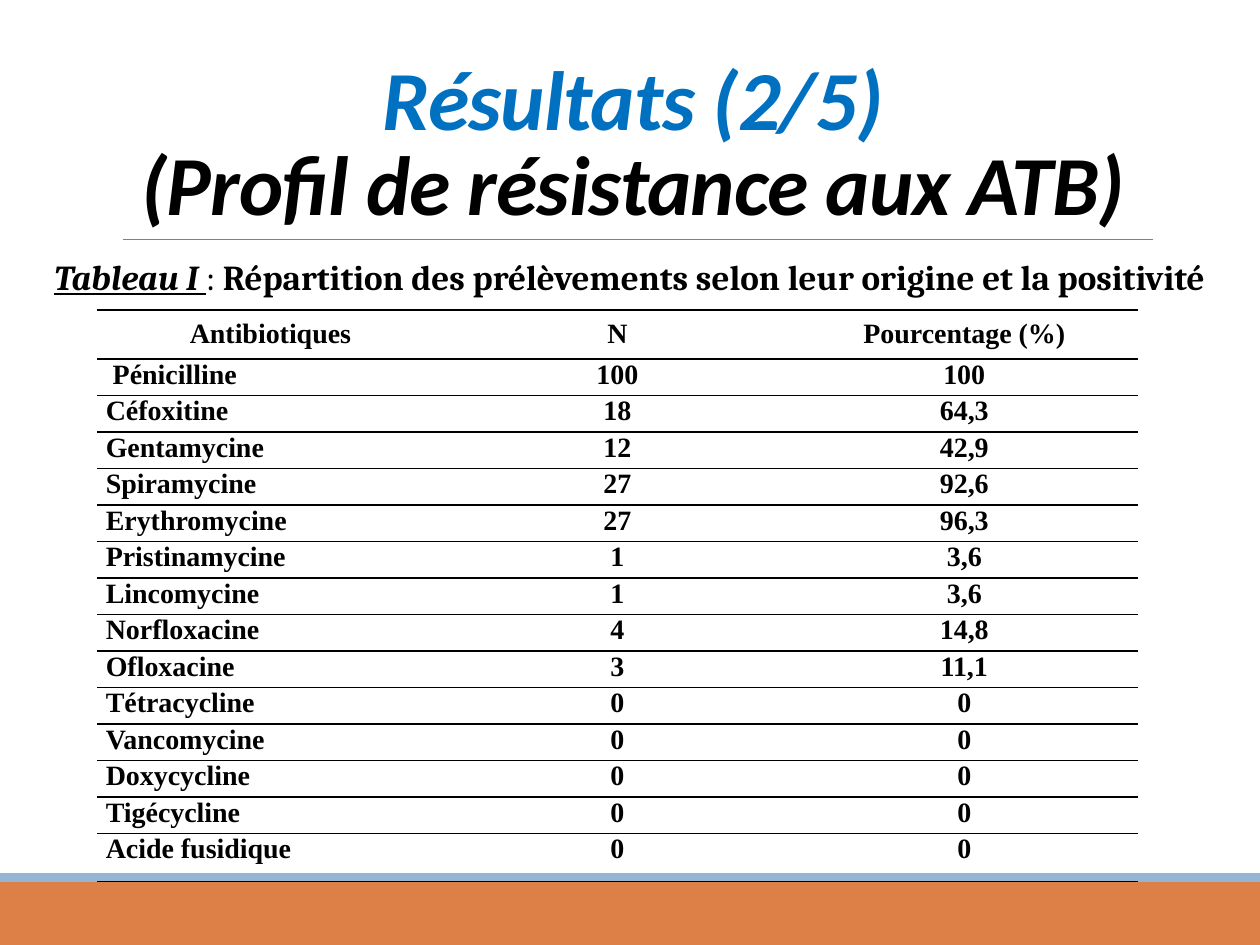
from typing import NamedTuple

from lxml import etree
from pptx import Presentation, util as u
from pptx.dml.color import RGBColor
from pptx.enum import shapes, text
from pptx.oxml import ns

BLACK = "000000"
CENTER = text.PP_ALIGN.CENTER


class Band(NamedTuple):
    top: float
    height: float
    color: str


class Resistance(NamedTuple):
    antibiotic: str
    count: str
    percentage: str


BANDS = [Band(7, 0.5, "DD8047"), Band(6.93, 0.07, "94B6D2")]
HEADER = Resistance("Antibiotiques", "N", "Pourcentage (%)")
RESULTS = [
    Resistance(" Pénicilline", "100", "100"),
    Resistance("Céfoxitine", "18", "64,3"),
    Resistance("Gentamycine", "12", "42,9"),
    Resistance("Spiramycine", "27", "92,6"),
    Resistance("Erythromycine", "27", "96,3"),
    Resistance("Pristinamycine", "1", "3,6"),
    Resistance("Lincomycine", "1", "3,6"),
    Resistance("Norfloxacine", "4", "14,8"),
    Resistance("Ofloxacine", "3", "11,1"),
    Resistance("Tétracycline", "0", "0"),
    Resistance("Vancomycine", "0", "0"),
    Resistance("Doxycycline", "0", "0"),
    Resistance("Tigécycline", "0", "0"),
    Resistance("Acide fusidique", "0", "0"),
]


def rgb(color: str) -> RGBColor:
    return RGBColor.from_string(color)


def add_run(paragraph, content: str, *, font: str, size: float, color: str = BLACK,
            bold: bool = True, italic: bool = False, underline: bool = False,
            spacing: float = 0) -> None:
    run = paragraph.add_run()
    run.text = content
    run.font.name = font
    run.font.size = u.Pt(size)
    run.font.bold = bold
    run.font.italic = italic
    run.font.underline = underline
    run.font.color.rgb = rgb(color)
    if spacing:
        run.font._element.set("spc", str(round(spacing * 100)))


def add_band(slide, band: Band) -> None:
    shape = slide.shapes.add_shape(shapes.MSO_SHAPE.RECTANGLE, 0, u.Inches(band.top),
                                   u.Inches(10), u.Inches(band.height))
    shape.shadow.inherit = False
    shape.fill.solid()
    shape.fill.fore_color.rgb = rgb(band.color)
    shape.line.fill.background()


def add_rule(slide) -> None:
    rule = slide.shapes.add_connector(shapes.MSO_CONNECTOR.STRAIGHT, u.Inches(0.98),
                                      u.Inches(1.9), u.Inches(9.15), u.Inches(1.9))
    rule.line.color.rgb = rgb("808080")
    rule.line.width = u.Pt(0.5)
    etree.SubElement(rule._element.spPr, ns.qn("a:effectLst"))


def fill_title(title) -> None:
    title.left, title.top = u.Inches(0.9), u.Inches(0.31)
    title.width, title.height = u.Inches(8.25), u.Inches(1.59)
    frame = title.text_frame
    frame.auto_size = text.MSO_AUTO_SIZE.NONE
    frame.vertical_anchor = text.MSO_ANCHOR.BOTTOM
    paragraph = frame.paragraphs[0]
    paragraph.alignment = CENTER
    paragraph.line_spacing = 0.85
    style = dict(font="Calibri", size=48, italic=True, spacing=-0.5)
    add_run(paragraph, "Résultats (2/5)", color="0070C0", **style)
    paragraph.add_line_break()
    add_run(paragraph, "(Profil de résistance aux ATB)", **style)


def add_caption(slide) -> None:
    box = slide.shapes.add_textbox(0, u.Inches(1.98), u.Inches(10), u.Inches(0.71))
    box.text_frame.word_wrap = True
    paragraph = box.text_frame.paragraphs[0]
    paragraph.alignment = CENTER
    style = dict(font="Cambria", size=20)
    add_run(paragraph, "Tableau I ", italic=True, underline=True, **style)
    add_run(paragraph, ": ", bold=False, **style)
    add_run(paragraph, "Répartition des prélèvements selon leur origine et la positivité",
            **style)


def set_borders(cell) -> None:
    """Rule the top and bottom of a cell and leave its sides open."""
    properties = cell._tc.get_or_add_tcPr()
    for side in ("lnL", "lnR", "lnT", "lnB"):
        line = etree.SubElement(properties, ns.qn(f"a:{side}"), w=str(u.Pt(1)))
        if side in ("lnL", "lnR"):
            etree.SubElement(line, ns.qn("a:noFill"))
        else:
            fill = etree.SubElement(line, ns.qn("a:solidFill"))
            etree.SubElement(fill, ns.qn("a:srgbClr"), val=BLACK)


def fill_cell(cell, content: str, *, centered: bool, middle: bool) -> None:
    set_borders(cell)
    cell.fill.background()
    cell.margin_left = cell.margin_right = u.Inches(0.07)
    cell.margin_top = cell.margin_bottom = 0
    cell.vertical_anchor = text.MSO_ANCHOR.MIDDLE if middle else text.MSO_ANCHOR.TOP
    paragraph = cell.text_frame.paragraphs[0]
    paragraph.alignment = CENTER if centered else text.PP_ALIGN.LEFT
    add_run(paragraph, content, font="Times New Roman", size=16)


def add_results_table(slide) -> None:
    rows = [HEADER, *RESULTS]
    heights = [0.39] + [0.29] * (len(RESULTS) - 1) + [0.38]
    table = slide.shapes.add_table(len(rows), len(HEADER), u.Inches(0.77), u.Inches(2.46),
                                   u.Inches(8.26), u.Inches(sum(heights))).table
    table.first_row = table.horz_banding = False
    for row_index, (row, height) in enumerate(zip(rows, heights)):
        table.rows[row_index].height = u.Inches(height)
        is_header = row_index == 0
        for column_index, content in enumerate(row):
            fill_cell(table.cell(row_index, column_index), content,
                      centered=is_header or column_index > 0, middle=is_header)


def main() -> None:
    presentation = Presentation()
    presentation.slide_width, presentation.slide_height = u.Inches(10), u.Inches(7.5)
    slide = presentation.slides.add_slide(presentation.slide_layouts[5])  # Title Only

    # Background bands and the rule under the title
    for band in BANDS:
        add_band(slide, band)
    add_rule(slide)

    # Title, caption and table
    fill_title(slide.shapes.title)
    add_caption(slide)
    add_results_table(slide)

    presentation.save("out.pptx")


if __name__ == "__main__":
    main()
